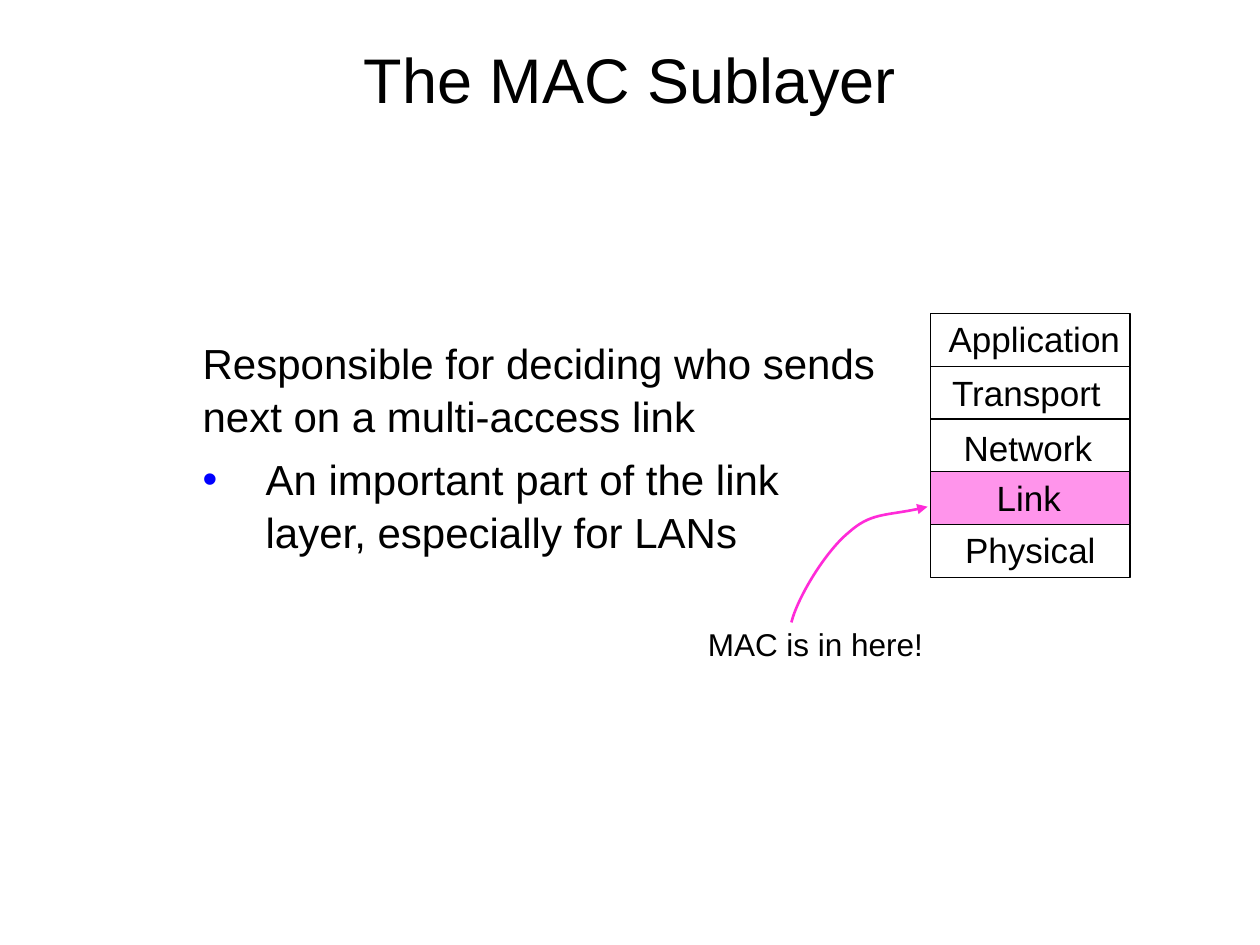
from lxml.etree import SubElement
from pptx import Presentation
from pptx.dml.color import RGBColor
from pptx.enum.shapes import MSO_SHAPE
from pptx.enum.text import MSO_ANCHOR, PP_ALIGN
from pptx.oxml.ns import qn
from pptx.util import Pt

COLORS = {"text": "000000", "paper": "FFFFFF", "accent": "FF2BD8", "bullet": "0000FF"}
FONT = "Arial"

# Protocol stack: layer name, label left, label top, label width
LAYERS = [
    ("Application", 535, 178, 112.3),
    ("Transport", 537, 209, 100),
    ("Network", 543.6, 240.3, 88),
    ("Link", 562.5, 269, 52),
    ("Physical", 544.4, 298.2, 89.3),
]
STACK_LEFT, STACK_TOP, STACK_WIDTH, ROW_HEIGHT = 531.8, 179.2, 113.9, 30.15

# Start of the curve, then two cubic segments of three points each
CURVE = [(452.2, 355.7), (455.8, 341.3), (471.6, 315.4), (484.6, 304.6),
         (497.5, 293), (506.9, 295.2), (530, 289.6)]


def rgb(name):
    return RGBColor.from_string(COLORS[name])


def add_run(p, text, size):
    r = p.add_run()
    r.text = text
    r.font.name = FONT
    r.font.size = Pt(size)
    r.font.color.rgb = rgb("text")


def add_title(s, text):
    sp = s.shapes.title
    sp.left, sp.top, sp.width, sp.height = Pt(0), Pt(0), Pt(720), Pt(90)
    tf = sp.text_frame
    tf.vertical_anchor = MSO_ANCHOR.MIDDLE
    p = tf.paragraphs[0]
    p.alignment = PP_ALIGN.CENTER
    add_run(p, text, 36)


def add_label(shapes, text, left, top, width, height, size, wrap=False):
    sp = shapes.add_textbox(Pt(left), Pt(top), Pt(width), Pt(height))
    sp.text_frame.word_wrap = wrap
    p = sp.text_frame.paragraphs[0]
    add_run(p, text, size)
    return sp


def set_bullet(p, char, color, indent):
    pPr = p._p.get_or_add_pPr()
    pPr.set("marL", str(Pt(indent)))
    pPr.set("indent", str(-Pt(indent)))
    clr = SubElement(pPr, qn("a:buClr"))
    SubElement(clr, qn("a:srgbClr"), val=COLORS[color])
    SubElement(pPr, qn("a:buFont"), typeface=FONT)
    SubElement(pPr, qn("a:buChar"), char=char)


def add_body(s):
    sp = add_label(s.shapes, "Responsible for deciding who sends next on a multi-access link",
                   108.7, 187.9, 399.6, 316.8, 24, wrap=True)
    tf = sp.text_frame
    p = tf.add_paragraph()
    p.space_before = Pt(6)
    add_run(p, "An important part of the link layer, especially for LANs", 24)
    for para in tf.paragraphs:
        para.line_spacing = 1.05
    set_bullet(p, "•", "bullet", 36)


def add_layer_box(shapes, row, highlighted):
    sp = shapes.add_shape(MSO_SHAPE.RECTANGLE, Pt(STACK_LEFT), Pt(STACK_TOP + row * ROW_HEIGHT),
                          Pt(STACK_WIDTH), Pt(ROW_HEIGHT))
    sp.shadow.inherit = False
    sp.line.color.rgb = rgb("text")
    sp.line.width = Pt(0.75)
    if highlighted:
        sp.fill.solid()
        sp.fill.fore_color.rgb = rgb("accent")
        clr = sp.fill._xPr.find(qn("a:solidFill")).find(qn("a:srgbClr"))
        SubElement(clr, qn("a:alpha"), val="50000")
    else:
        sp.fill.background()


def add_stack(s):
    shapes = s.shapes.add_group_shape().shapes
    for row, (name, left, top, width) in enumerate(LAYERS):
        add_layer_box(shapes, row, name == "Link")
        add_label(shapes, name, left, top, width, 31, 20)


def add_curved_arrow(s, points):
    pts = [(Pt(x), Pt(y)) for x, y in points]
    fb = s.shapes.build_freeform(*pts[0])
    fb.add_line_segments(pts[1:], close=False)
    sp = fb.convert_to_shape()
    sp.shadow.inherit = False
    sp.fill.background()
    sp.line.color.rgb = rgb("accent")
    sp.line.width = Pt(1.5)
    # Turn each three line points into one cubic segment
    path = next(sp._element.iter(qn("a:path")))
    lines = path.findall(qn("a:lnTo"))
    for i in range(0, len(lines), 3):
        curve = SubElement(path, qn("a:cubicBezTo"))
        for ln in lines[i:i + 3]:
            curve.append(ln[0])
            path.remove(ln)
    ln = sp.line._get_or_add_ln()
    SubElement(ln, qn("a:tailEnd"), type="triangle")


def main():
    prs = Presentation()
    prs.slide_width, prs.slide_height = Pt(720), Pt(540)
    s = prs.slides.add_slide(prs.slide_layouts[5])
    s.background.fill.solid()
    s.background.fill.fore_color.rgb = rgb("paper")

    add_title(s, "The MAC Sublayer")
    add_body(s)
    add_stack(s)

    # Callout for the link layer
    note = add_label(s.shapes, "MAC is in here!", 397.4, 353.5, 143.3, 29, 18, wrap=True)
    note.fill.solid()
    note.fill.fore_color.rgb = rgb("paper")
    add_curved_arrow(s, CURVE)

    prs.save("out.pptx")


if __name__ == "__main__":
    main()
